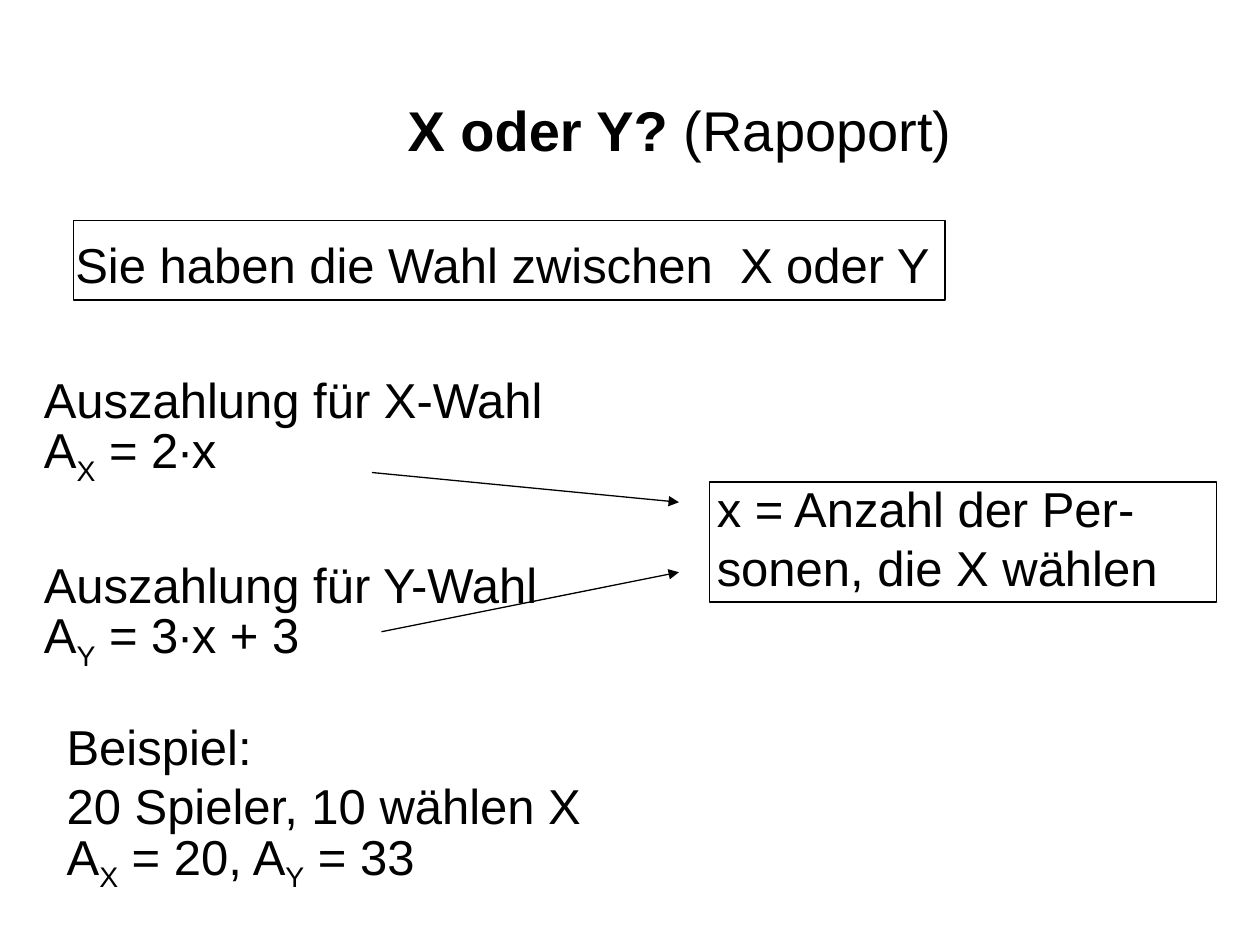
from dataclasses import dataclass

from lxml.etree import SubElement
from pptx import Presentation
from pptx.dml.color import RGBColor
from pptx.enum.shapes import MSO_CONNECTOR, MSO_SHAPE
from pptx.enum.text import MSO_ANCHOR, PP_ALIGN
from pptx.oxml.ns import qn
from pptx.util import Pt


@dataclass(frozen=True)
class Theme:
    font: str = "Arial"
    ink: RGBColor = RGBColor(0, 0, 0)
    title: float = 32
    body: float = 28
    leading: float = 33.6
    line: float = 0.75


T = Theme()


def add_text(s, box, top_inset=3.6):
    tf = s.shapes.add_textbox(*map(Pt, box)).text_frame
    tf.word_wrap = True
    tf.margin_top = Pt(top_inset)
    return tf


def add_run(p, text, size=T.body, bold=False, subscript=False):
    r = p.add_run()
    r.text = text
    r.font.name = T.font
    r.font.size = Pt(size)
    r.font.bold = bold
    r.font.color.rgb = T.ink
    if subscript:
        r.font._element.set("baseline", "-25000")


def add_lines(tf, lines, gaps=None):
    for i, line in enumerate(lines):
        p = tf.add_paragraph() if i else tf.paragraphs[0]
        p.line_spacing = Pt(T.leading)
        if gaps and i in gaps:
            p.space_before = Pt(gaps[i])
        for j, part in enumerate(line.split("_")):
            if j:
                add_run(p, part[0], subscript=True)
                part = part[1:]
            if part:
                add_run(p, part)


def add_frame(s, box):
    sp = s.shapes.add_shape(MSO_SHAPE.RECTANGLE, *map(Pt, box))
    sp.shadow.inherit = False
    sp.fill.background()
    sp.line.color.rgb = T.ink
    sp.line.width = Pt(T.line)


def add_arrow(s, start, end):
    c = s.shapes.add_connector(MSO_CONNECTOR.STRAIGHT, *map(Pt, start + end))
    c.line.color.rgb = T.ink
    c.line.width = Pt(T.line)
    SubElement(c.line._get_or_add_ln(), qn("a:tailEnd"), type="triangle")
    SubElement(c._element.spPr, qn("a:effectLst"))


def add_title(s, box):
    tf = add_text(s, box, top_inset=18.4)
    tf.margin_left = Pt(64)
    tf.vertical_anchor = MSO_ANCHOR.MIDDLE
    p = tf.paragraphs[0]
    p.alignment = PP_ALIGN.CENTER
    add_run(p, "X oder Y? ", T.title, bold=True)
    add_run(p, "(Rapoport)", T.title)


def add_question(s, box):
    x, y, w, h = box
    add_lines(add_text(s, box, top_inset=8),
              ["Sie haben die Wahl zwischen  X oder Y"])
    add_frame(s, (x + 6, y, 498, 45.5))


def add_payoffs(s, box):
    x, y, w, h = box
    lines = ["Auszahlung für X-Wahl", "A_X = 2∙x",
             "Auszahlung für Y-Wahl", "A_Y = 3∙x + 3"]
    add_lines(add_text(s, box), lines, gaps={2: T.leading + 4.8})
    add_arrow(s, (x + 194.5, y + 62.5), (x + 370, y + 79.5))
    add_arrow(s, (x + 200, y + 153.5), (x + 370, y + 119.5))


def add_definition(s, box):
    x, y, w, h = box
    add_lines(add_text(s, box), ["x = Anzahl der Per- sonen, die X wählen"])
    add_frame(s, (x + 3, y + 5.5, 289.5, 68.5))


def add_example(s, box):
    add_lines(add_text(s, box),
              ["Beispiel:", "20 Spieler, 10 wählen X", "A_X = 20, A_Y = 33"])


def main():
    prs = Presentation()
    prs.slide_width, prs.slide_height = Pt(720), Pt(540)
    s = prs.slides.add_slide(prs.slide_layouts[6])
    add_title(s, (36, 21.6, 648, 90))
    add_question(s, (36, 126, 648, 110))
    add_payoffs(s, (18, 207.5, 314, 175.5))
    add_definition(s, (402.5, 270, 317.5, 74))
    add_example(s, (31, 406, 618, 108))
    prs.save("out.pptx")


if __name__ == "__main__":
    main()
